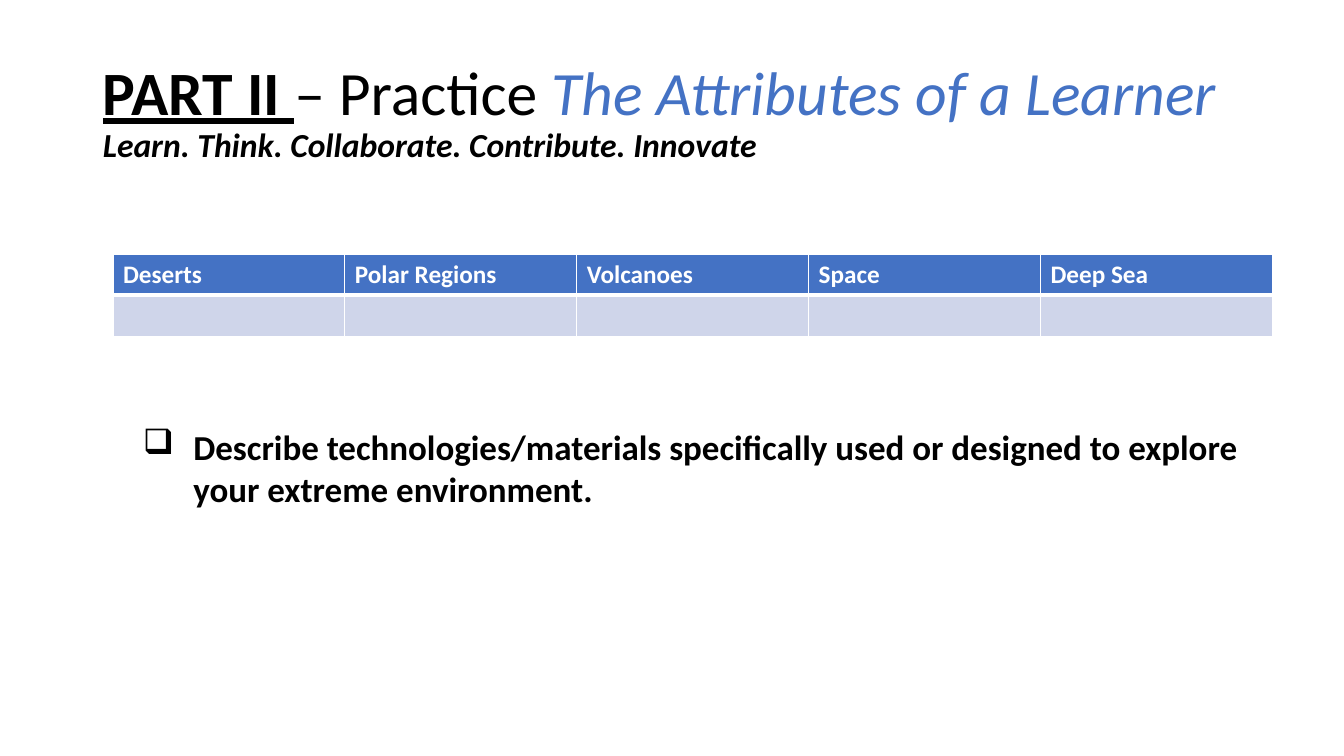
import lxml.etree
import pptx
import pptx.dml.color
import pptx.enum.text
import pptx.oxml.ns
import pptx.util

Inches = pptx.util.Inches
Pt = pptx.util.Pt
COLORS = {"black": "000000", "white": "FFFFFF", "blue": "4472C4", "pale": "CFD5EA"}


def color(name):
    return pptx.dml.color.RGBColor.from_string(COLORS[name])


def write(para, text, size=18, ink="black", bold=False, slant=False, under=False):
    run = para.add_run()
    run.text = text
    font = run.font
    font.name, font.size = "Calibri", Pt(size)
    font.bold, font.italic, font.underline = bold, slant, under
    font.color.rgb = color(ink)


def child(node, tag, **attrs):
    return lxml.etree.SubElement(node, pptx.oxml.ns.qn(tag), **attrs)


class Deck:
    def __init__(self):
        self.show = pptx.Presentation()
        self.show.slide_width = Inches(13.33)
        self.show.slide_height = Inches(7.5)
        self.slide = self.show.slides.add_slide(self.show.slide_layouts[5])

    def title(self, left, top, width, height, lines):
        shape = self.slide.shapes.title
        shape.left, shape.top = Inches(left), Inches(top)
        shape.width, shape.height = Inches(width), Inches(height)
        frame = shape.text_frame
        frame.word_wrap = True
        frame.auto_size = pptx.enum.text.MSO_AUTO_SIZE.NONE
        frame.vertical_anchor = pptx.enum.text.MSO_ANCHOR.MIDDLE
        para = frame.paragraphs[0]
        para.alignment = pptx.enum.text.PP_ALIGN.LEFT
        para.line_spacing = 0.9
        for i, line in enumerate(lines):
            if i:
                para.add_line_break()
            for text, style in line:
                write(para, text, **style)

    def edge(self, cell, **widths):
        props = cell._tc.get_or_add_tcPr()
        for side in "LRTB":
            line = child(props, f"a:ln{side}", w=str(Pt(widths.get(side, 1))))
            fill = child(line, "a:solidFill")
            child(fill, "a:srgbClr", val=COLORS["white"])

    def table(self, left, top, width, height, heads):
        frame = self.slide.shapes.add_table(
            2, len(heads), Inches(left), Inches(top), Inches(width), Inches(height))
        for i, head in enumerate(heads):
            top_cell, low_cell = (frame.table.cell(row, i) for row in (0, 1))
            self.edge(top_cell, B=3)
            self.edge(low_cell, T=3)
            for cell, fill in ((top_cell, "blue"), (low_cell, "pale")):
                cell.fill.solid()
                cell.fill.fore_color.rgb = color(fill)
            write(top_cell.text_frame.paragraphs[0], head, ink="white", bold=True)

    def bullet(self, left, top, width, height, text, **style):
        box = self.slide.shapes.add_textbox(
            Inches(left), Inches(top), Inches(width), Inches(height))
        frame = box.text_frame
        frame.word_wrap = True
        frame.auto_size = pptx.enum.text.MSO_AUTO_SIZE.SHAPE_TO_FIT_TEXT
        para = frame.paragraphs[0]
        write(para, text, **style)
        props = para._p.get_or_add_pPr()
        props.set("marL", str(Inches(0.5)))
        props.set("indent", str(-Inches(0.5)))
        child(props, "a:buChar", char="❑")


def main():
    deck = Deck()

    # Title with its motto
    deck.title(0.92, 0.4, 11.5, 1.45, [
        [("PART II ", dict(size=44, bold=True, under=True)),
         ("– Practice ", dict(size=44)),
         ("The Attributes of a Learner", dict(size=44, ink="blue", slant=True))],
        [("Learn. Think. Collaborate. Contribute. Innovate",
          dict(size=24, bold=True, slant=True))],
    ])

    # Extreme places
    deck.table(1.12, 2.52, 11.5, 0.82,
               ["Deserts", "Polar Regions", "Volcanoes", "Space", "Deep Sea"])

    # Task
    deck.bullet(1.32, 4.17, 11.1, 0.94,
                "Describe technologies/materials specifically used or designed "
                "to explore your extreme environment.", size=25, bold=True)

    deck.show.save("out.pptx")


if __name__ == "__main__":
    main()
